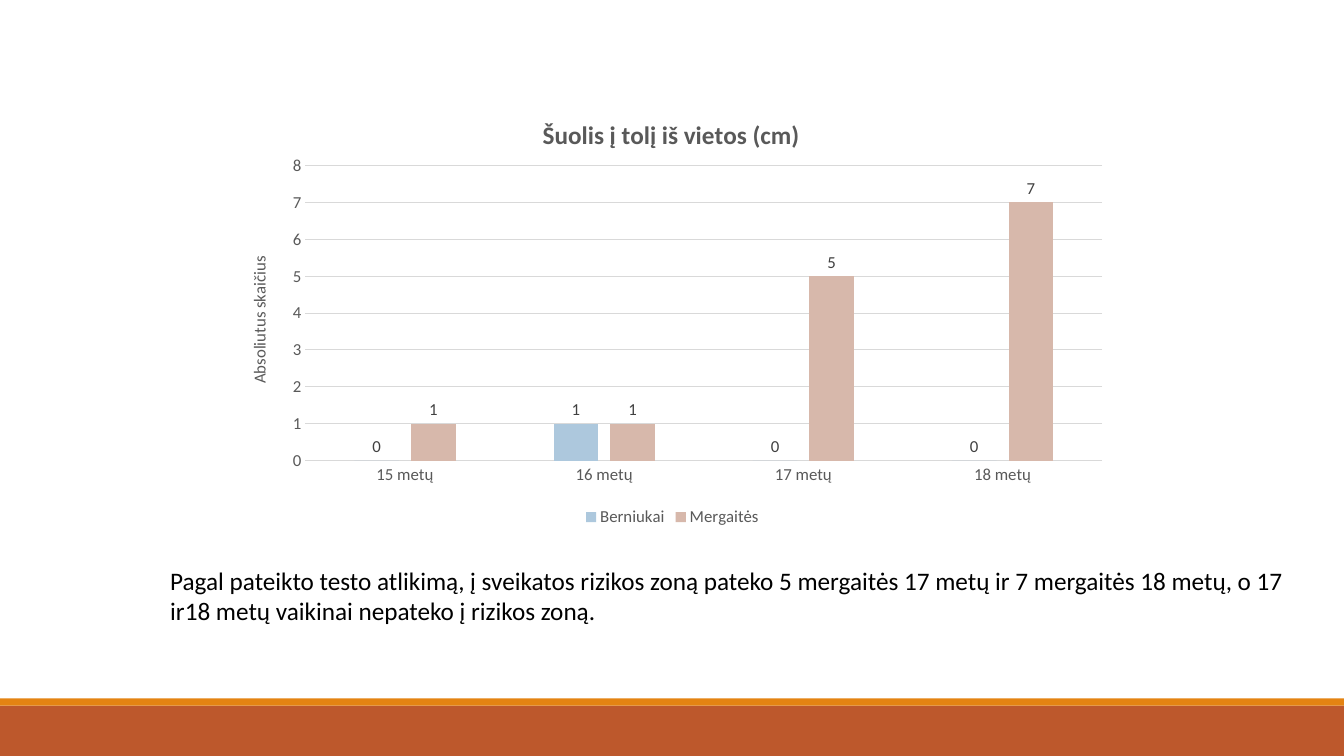
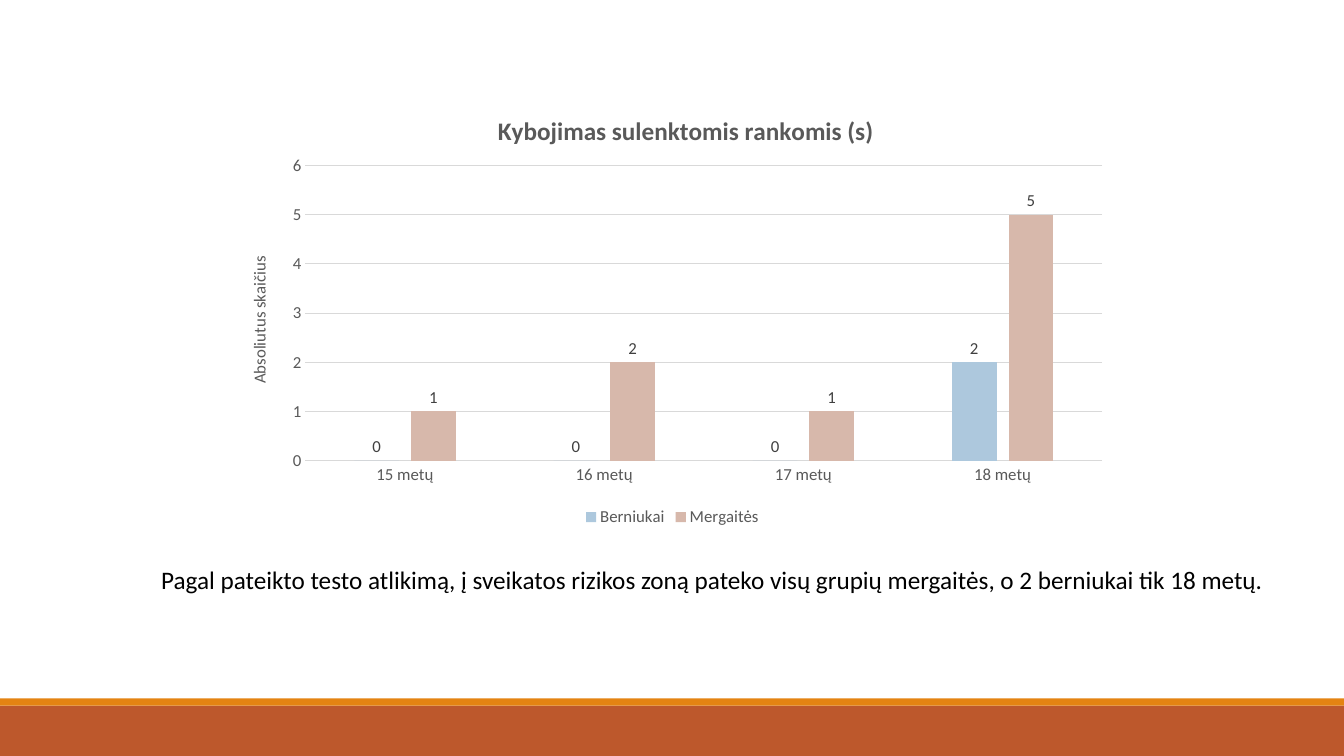
from lxml import etree
from pptx import Presentation
from pptx.chart.data import CategoryChartData
from pptx.dml.color import RGBColor
from pptx.enum.chart import XL_CHART_TYPE, XL_LABEL_POSITION, XL_LEGEND_POSITION, XL_TICK_MARK
from pptx.enum.shapes import MSO_SHAPE
from pptx.oxml.ns import qn
from pptx.util import Inches, Pt

COLUMN_CLUSTERED = XL_CHART_TYPE.COLUMN_CLUSTERED
OUTSIDE_END = XL_LABEL_POSITION.OUTSIDE_END
LEGEND_BOTTOM = XL_LEGEND_POSITION.BOTTOM
NO_TICK = XL_TICK_MARK.NONE
RECTANGLE = MSO_SHAPE.RECTANGLE

RUST = RGBColor(0xBD, 0x58, 0x2C)
ORANGE = RGBColor(0xE4, 0x83, 0x12)
BLUE = RGBColor(0xAD, 0xC8, 0xDD)
PINK = RGBColor(0xD7, 0xB8, 0xAB)
BLACK = RGBColor(0x00, 0x00, 0x00)
LABEL_GRAY = RGBColor(0x40, 0x40, 0x40)
TEXT_GRAY = RGBColor(0x59, 0x59, 0x59)
GRID_GRAY = RGBColor(0xD9, 0xD9, 0xD9)

FONT = "Calibri"
AGES = ["15 metų", "16 metų", "17 metų", "18 metų"]
SERIES_COLORS = {"Berniukai": BLUE, "Mergaitės": PINK}
BANDS = [(7, 0.5, RUST), (6.93, 0.07, ORANGE)]

SLIDES = [
    {
        "title": "Šuolis į tolį iš vietos (cm)",
        "title_place": {"x": 0.35, "y": 0.05},
        "counts": [(0, 1, 0, 0), (1, 1, 5, 7)],
        "finding": "Pagal pateikto testo atlikimą, į sveikatos rizikos zoną pateko 5 mergaitės "
                   "17 metų ir 7 mergaitės 18 metų, o 17 ir18 metų vaikinai nepateko į rizikos zoną.",
        "finding_box": (1.59, 5.56, 11.54, 0.71),
    },
    {
        "title": "Kybojimas sulenktomis rankomis (s)",
        "title_place": {"x": 0.3, "y": 0.04},
        "counts": [(0, 0, 0, 2), (1, 2, 1, 5)],
        "finding": "Pagal pateikto testo atlikimą, į sveikatos rizikos zoną pateko visų grupių "
                   "mergaitės, o 2 berniukai tik 18 metų.",
        "finding_box": (1.5, 5.55, 11.54, 0.4),
    },
]


def style_font(font, size, color, bold=False):
    font.name = FONT
    font.size = Pt(size)
    font.color.rgb = color
    font.bold = bold


def place_in_chart(element, settings):
    layout = element.find(qn("c:layout"))
    if layout is None:
        layout = etree.Element(qn("c:layout"))
        element.insert(0, layout)
    manual = etree.SubElement(layout, qn("c:manualLayout"))
    for name, value in settings.items():
        etree.SubElement(manual, qn("c:" + name)).set("val", str(value))


presentation = Presentation()
presentation.slide_width = Inches(13.33)
presentation.slide_height = Inches(7.5)
blank_layout = presentation.slide_layouts[6]

for content in SLIDES:
    slide = presentation.slides.add_slide(blank_layout)

    for top, height, color in BANDS:
        band = slide.shapes.add_shape(
            RECTANGLE, 0, Inches(top), presentation.slide_width, Inches(height))
        band.shadow.inherit = False
        band.fill.solid()
        band.fill.fore_color.rgb = color
        band.line.fill.background()

    chart_data = CategoryChartData(number_format="#,##0")
    chart_data.categories = AGES
    for name, counts in zip(SERIES_COLORS, content["counts"]):
        chart_data.add_series(name, counts)
    chart = slide.shapes.add_chart(
        COLUMN_CLUSTERED, Inches(2.23), Inches(0.9), Inches(8.88), Inches(4.37), chart_data).chart
    style_font(chart.font, 10, BLACK)

    title_frame = chart.chart_title.text_frame
    title_frame.text = content["title"]
    style_font(title_frame.paragraphs[0].runs[0].font, 18, TEXT_GRAY, bold=True)
    chart.chart_title.include_in_layout = False
    place_in_chart(chart.chart_title._element,
                   {"xMode": "edge", "yMode": "edge", **content["title_place"]})

    chart.has_legend = True
    chart.legend.position = LEGEND_BOTTOM
    chart.legend.include_in_layout = False
    style_font(chart.legend.font, 12, TEXT_GRAY)

    for axis in (chart.category_axis, chart.value_axis):
        axis.major_tick_mark = NO_TICK
        axis.minor_tick_mark = NO_TICK
        style_font(axis.tick_labels.font, 12, TEXT_GRAY)

    category_line = chart.category_axis.format.line
    category_line.color.rgb = GRID_GRAY
    category_line.width = Pt(0.75)

    value_axis = chart.value_axis
    value_axis.minimum_scale = 0
    value_axis.maximum_scale = max(map(max, content["counts"])) + 1
    value_axis.major_unit = 1
    value_axis.format.line.fill.background()
    value_axis.major_gridlines.format.line.color.rgb = GRID_GRAY
    value_axis.major_gridlines.format.line.width = Pt(0.75)
    axis_frame = value_axis.axis_title.text_frame
    axis_frame.text = "Absoliutus skaičius"
    axis_frame._txBody.bodyPr.set("rot", "-5400000")
    style_font(axis_frame.paragraphs[0].runs[0].font, 12, TEXT_GRAY)

    plot = chart.plots[0]
    plot.gap_width = 219
    plot.overlap = -27
    plot.vary_by_categories = False
    place_in_chart(plot._element.getparent(), {
        "layoutTarget": "inner", "xMode": "edge", "yMode": "edge",
        "x": 0.09, "y": 0.17, "w": 0.89, "h": 0.67})

    for series, color in zip(plot.series, SERIES_COLORS.values()):
        series.format.fill.solid()
        series.format.fill.fore_color.rgb = color
        labels = series.data_labels
        labels.show_value = True
        labels.position = OUTSIDE_END
        style_font(labels.font, 12, LABEL_GRAY)

    finding = slide.shapes.add_textbox(*map(Inches, content["finding_box"])).text_frame
    finding.word_wrap = True
    finding.text = content["finding"]
    style_font(finding.paragraphs[0].runs[0].font, 18, BLACK)

presentation.save("out.pptx")
